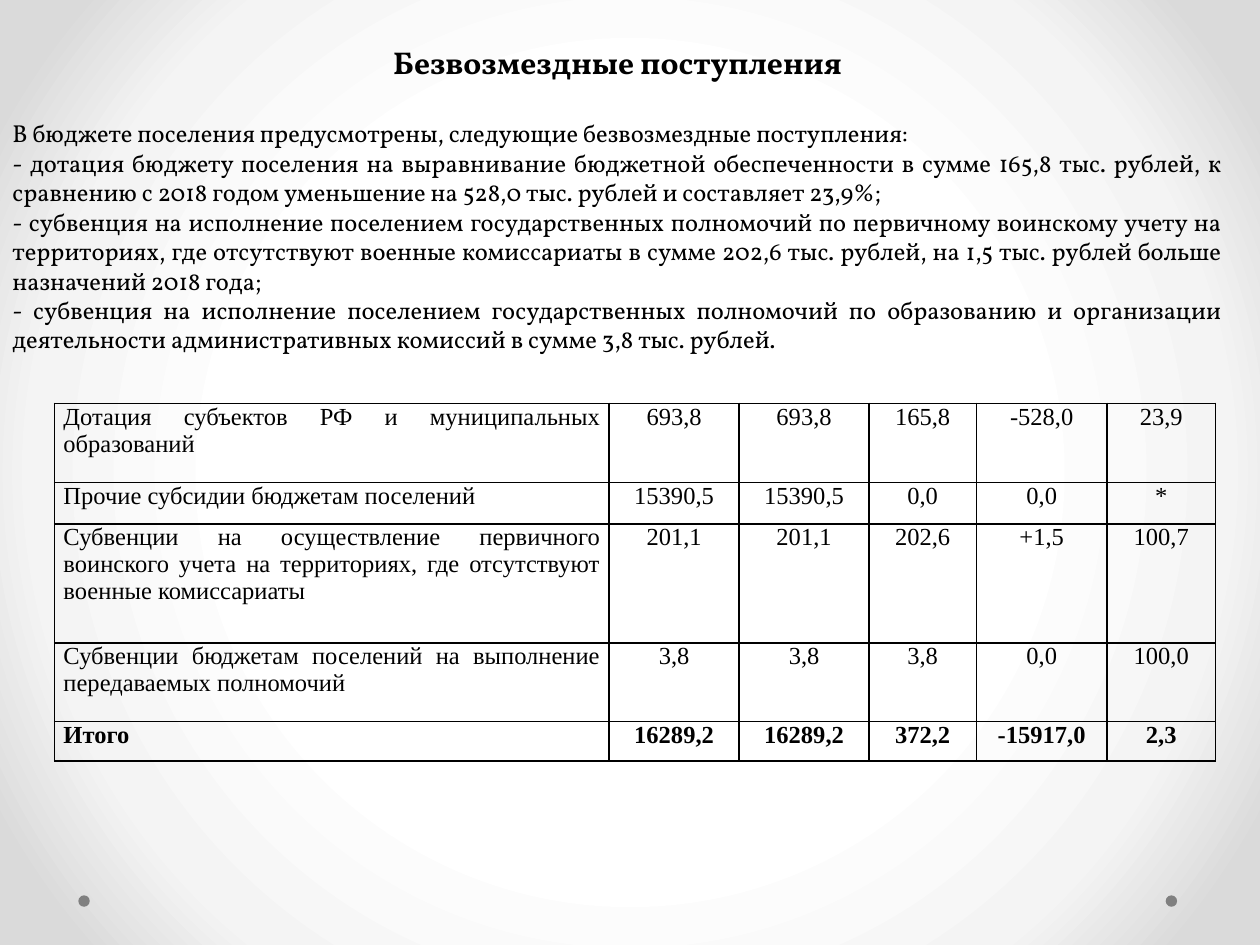
from lxml import etree
from pptx import Presentation
from pptx.dml.color import RGBColor
from pptx.enum.shapes import MSO_SHAPE
from pptx.enum.text import MSO_AUTO_SIZE, PP_ALIGN
from pptx.oxml import parse_xml
from pptx.oxml.ns import nsdecls, qn
from pptx.util import Cm, Pt

OVAL = MSO_SHAPE.OVAL
GROW = MSO_AUTO_SIZE.SHAPE_TO_FIT_TEXT
MID, JUST = PP_ALIGN.CENTER, PP_ALIGN.JUSTIFY
SERIF, BODY = "Times New Roman", "Vollkorn"
BLACK, GREY = "000000", "808080"
STOPS = [(50, "FFFFFF"), (76, "F4F4F4"), (92, "DADADA")]
TITLE = "Безвозмездные поступления"
LINES = [
    "В бюджете поселения предусмотрены, следующие безвозмездные поступления:",
    "- дотация бюджету поселения на выравнивание бюджетной обеспеченности в сумме "
    "165,8 тыс. рублей, к сравнению с 2018 годом уменьшение на 528,0 тыс. рублей "
    "и составляет 23,9%;",
    "- субвенция на исполнение поселением государственных полномочий по первичному "
    "воинскому учету на территориях, где отсутствуют военные комиссариаты в сумме "
    "202,6 тыс. рублей, на 1,5 тыс. рублей больше назначений 2018 года;",
    "- субвенция на исполнение поселением государственных полномочий по образованию "
    "и организации деятельности административных комиссий в сумме 3,8 тыс. рублей.",
]
COLS = [11.18, 2.62, 2.62, 2.16, 2.64, 2.18]
ROWS = [
    (1.6, ["Дотация субъектов РФ и муниципальных образований",
           "693,8", "693,8", "165,8", "-528,0", "23,9"]),
    (0.83, ["Прочие субсидии бюджетам поселений",
            "15390,5", "15390,5", "0,0", "0,0", "*"]),
    (2.4, ["Субвенции на осуществление первичного воинского учета "
           "на территориях, где отсутствуют военные комиссариаты",
           "201,1", "201,1", "202,6", "+1,5", "100,7"]),
    (1.58, ["Субвенции бюджетам поселений на выполнение передаваемых полномочий",
            "3,8", "3,8", "3,8", "0,0", "100,0"]),
    (0.8, ["Итого", "16289,2", "16289,2", "372,2", "-15917,0", "2,3"]),
]


def tint(color, code):
    """Give a colour format its hex colour."""
    color.rgb = RGBColor.from_string(code)


def style(para, face, size, align, bold=False):
    """Set the font and alignment of a paragraph."""
    para.alignment = align
    para.font.name, para.font.size, para.font.bold = face, Pt(size), bold
    tint(para.font.color, BLACK)


def back(slide):
    """Fill the background with a round gradient."""
    slide.background.fill.solid()
    root = slide.element.find(".//" + qn("p:bgPr"))
    root.remove(root[0])
    stops = "".join(
        f'<a:gs pos="{pos * 1000}"><a:srgbClr val="{code}"/></a:gs>' for pos, code in STOPS)
    root.insert(0, parse_xml(
        f'<a:gradFill {nsdecls("a")} rotWithShape="1"><a:gsLst>{stops}</a:gsLst>'
        '<a:path path="circle"><a:fillToRect l="50000" t="50000" r="50000" b="50000"/>'
        '</a:path></a:gradFill>'))


def dots(slide, left, top, gap, size):
    """Place two grey dots on one level."""
    for x in (left + gap, left):
        dot = slide.shapes.add_shape(OVAL, Cm(x), Cm(top), Cm(size), Cm(size))
        dot.shadow.inherit = False
        dot.fill.solid()
        tint(dot.fill.fore_color, GREY)
        dot.line.fill.background()


def story(slide, left, top, width, height):
    """Write the heading and the list of receipts."""
    frame = slide.shapes.add_textbox(Cm(left), Cm(top), Cm(width), Cm(height)).text_frame
    frame.word_wrap = True
    frame.auto_size = GROW
    head = frame.paragraphs[0]
    head.text = TITLE
    style(head, BODY, 18, MID, True)
    head._p.get_or_add_pPr().set("indent", str(-Cm(0.5)))
    for num, line in enumerate(LINES):
        para = frame.add_paragraph()
        para.text = line
        style(para, BODY, 14, JUST)
        if num == 0:
            para.space_before = Pt(21.6)


def border(cell):
    """Draw thin black lines on all sides of a cell."""
    root = cell._tc.get_or_add_tcPr()
    for num, side in enumerate("LRTB"):
        line = etree.Element(qn("a:ln" + side), w=str(Pt(1)))
        fill = etree.SubElement(line, qn("a:solidFill"))
        etree.SubElement(fill, qn("a:srgbClr"), val=BLACK)
        root.insert(num, line)


def grid(slide, left, top):
    """Build the table of receipts."""
    width, height = sum(COLS), sum(tall for tall, _ in ROWS)
    table = slide.shapes.add_table(
        len(ROWS), len(COLS), Cm(left), Cm(top), Cm(width), Cm(height)).table
    table.first_row = table.horz_banding = False
    for col, wide in zip(table.columns, COLS):
        col.width = Cm(wide)
    for row, (tall, texts) in zip(table.rows, ROWS):
        row.height = Cm(tall)
        for num, (cell, text) in enumerate(zip(row.cells, texts)):
            cell.fill.background()
            cell.margin_left = cell.margin_right = Cm(0.18)
            cell.margin_top = cell.margin_bottom = 0
            cell.text = text
            style(cell.text_frame.paragraphs[0], SERIF, 14,
                  MID if num else JUST, texts[0] == "Итого")
            border(cell)


def main():
    """Make the slide and save it."""
    deck = Presentation()
    deck.slide_width, deck.slide_height = Cm(25.4), Cm(19.05)
    slide = deck.slides.add_slide(deck.slide_layouts[6])
    back(slide)
    dots(slide, 1.58, 18.05, 21.92, 0.23)
    story(slide, 0, 0.74, 24.9, 6.58)
    grid(slide, 1.1, 8.13)
    deck.save("out.pptx")


if __name__ == "__main__":
    main()
